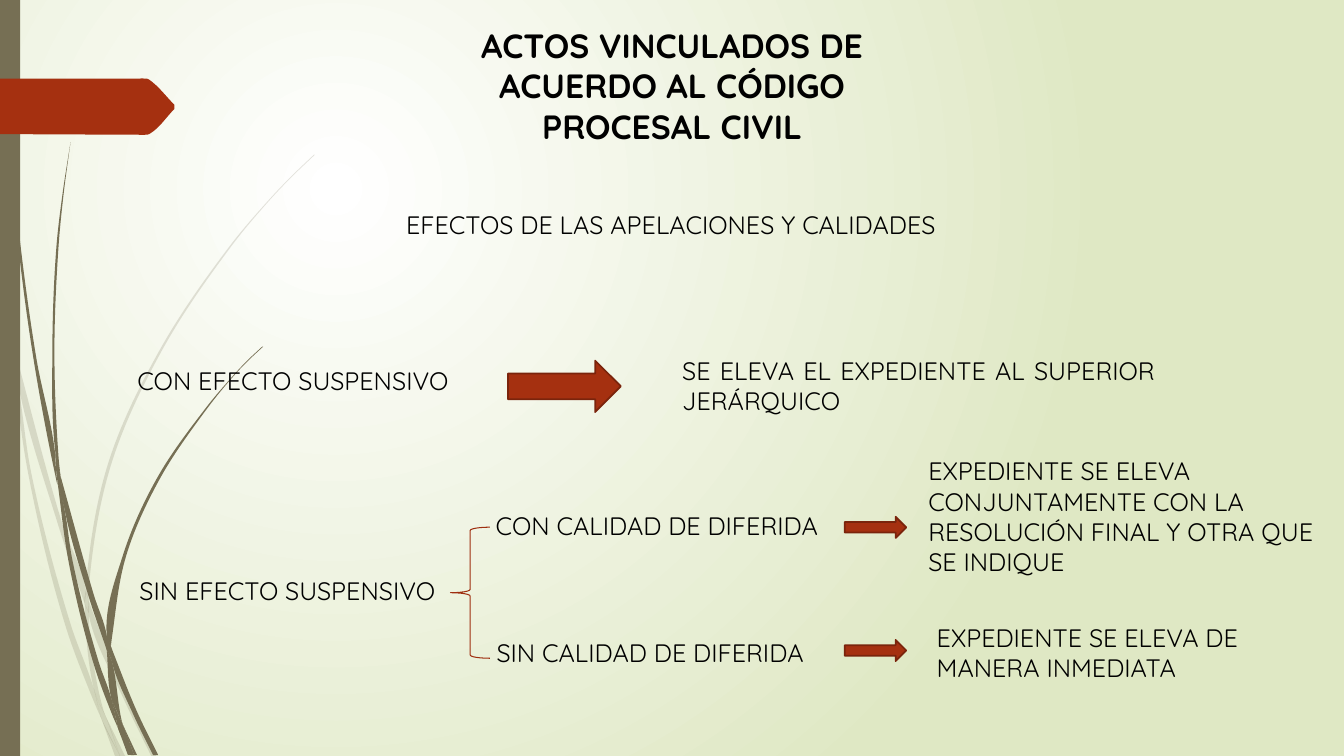
from lxml import etree
from pptx import Presentation
from pptx.dml.color import RGBColor
from pptx.enum.shapes import MSO_SHAPE
from pptx.enum.text import MSO_ANCHOR, PP_ALIGN
from pptx.oxml.ns import qn
from pptx.util import Pt

LEFT, CENTER, JUSTIFY = PP_ALIGN.LEFT, PP_ALIGN.CENTER, PP_ALIGN.JUSTIFY
TOP = MSO_ANCHOR.TOP
RECTANGLE = MSO_SHAPE.RECTANGLE
RIGHT_ARROW, LEFT_BRACE = MSO_SHAPE.RIGHT_ARROW, MSO_SHAPE.LEFT_BRACE

BLACK = RGBColor(0x00, 0x00, 0x00)
WHITE = RGBColor(0xFF, 0xFF, 0xFF)
PALE_GREEN = RGBColor(0xDF, 0xE8, 0xC4)
OLIVE = RGBColor(0x76, 0x6F, 0x54)
RUST = RGBColor(0xA5, 0x30, 0x10)
DARK_RUST = RGBColor(0x7A, 0x24, 0x0C)
BRACE_RUST = RGBColor(0x9E, 0x2E, 0x0F)

FAINT_STEMS = [
    [(7.9, 252), (6.5, 231.8), (0, 203), (0, 215.3), (7.2, 247.7)],
    [(41.8, 375.8), (60.5, 431.3), (61.2, 421.9), (44.6, 374.4), (10.1, 248.4), (12.2, 270.7)],
    [(66.2, 437), (63.4, 429.1), (63.4, 439.2), (88.6, 499.7), (108, 540), (111.6, 540),
     (91.4, 498.2)],
    [(85.7, 540), (89.3, 540), (75.6, 511.9)],
    [(67, 491.8), (50.4, 445.7), (22.3, 337.7), (12.2, 270.7), (7.9, 252), (20.2, 338.4),
     (46.8, 447.1), (66.2, 499), (72.7, 514.1), (71.3, 509)],
    [(60.5, 431.3), (62.6, 465.1), (67, 491.8), (69.1, 498.2), (75.6, 511.9),
     (74.2, 508.3), (65.5, 465.1), (63.4, 439.2), (63.4, 437.8)],
    [(63.4, 420.5), (79.2, 332.6), (115.2, 251.3), (164.9, 176.4), (193, 142.6),
     (208.8, 126), (224.6, 110.9), (224.6, 110.2), (208.1, 126), (193, 141.8),
     (164.2, 175.7), (113.8, 250.6), (77, 331.9), (61.2, 420.5), (61.2, 421.9),
     (63.4, 429.1)],
    [(72.7, 514.1), (82.1, 540), (85.7, 540)],
    [(63.4, 437.8), (63.4, 439.2), (63.4, 429.1), (61.2, 421.9), (60.5, 431.3)],
    [(69.1, 498.2), (67, 491.8), (71.3, 509), (72.7, 514.1), (85.7, 540), (75.6, 511.9)],
]
DARK_STEMS = [
    [(5, 79.2), (12.2, 167.8), (23.8, 255.6), (40.3, 343.4), (41, 346.3), (39.6, 329),
     (39.6, 326.2), (25.9, 255.6), (13.7, 167), (5.8, 78.5), (3.6, 34.6), (2.9, 0),
     (2.2, 0), (2.9, 34.6)],
    [(63.4, 426.2), (76.3, 464.4), (76.3, 455.8), (76.3, 454.3), (67, 424.8),
     (43.2, 339.8), (46.1, 363.6)],
    [(81.4, 467.3), (79.2, 461.5), (79.9, 472.3), (95, 509.8), (109.4, 539.3),
     (113, 539.3), (97.9, 508.3)],
    [(79.2, 497.5), (70.6, 473), (51.8, 400.3), (46.1, 363.6), (41, 343.4), (49, 401),
     (67, 474.5), (79.9, 509.8), (84.2, 519.8), (83.5, 516.2)],
    [(43.2, 339.8), (41.8, 326.2), (38.9, 251.3), (41.8, 176.4), (45.4, 139),
     (50.4, 101.5), (44.6, 139), (40.3, 176.4), (37.4, 251.3), (39.6, 323.3)],
    [(95.8, 539.3), (97.9, 539.3), (87.8, 517.7)],
    [(41, 343.4), (46.1, 363.6), (43.2, 339.8), (39.6, 323.3), (39.6, 326.2)],
    [(79.9, 455.8), (90, 397.4), (113.8, 342.7), (147.6, 292.3), (166.3, 269.3),
     (176.4, 258.5), (187.9, 247.7), (187.2, 247.7), (176.4, 257.8), (166.3, 268.6),
     (146.9, 291.6), (112.3, 341.3), (87.8, 396.7), (76.3, 454.3), (79.2, 461.5)],
    [(84.2, 519.8), (91.4, 539.3), (94.3, 539.3)],
    [(76.3, 464.4), (79.2, 497.5), (83.5, 508.3), (87.8, 517.7), (87.1, 515.5),
     (79.9, 472.3), (78.5, 468.7)],
    [(76.3, 464.4), (78.5, 468.7), (79.9, 472.3), (79.2, 461.5), (76.3, 454.3),
     (76.3, 455.8)],
    [(83.5, 508.3), (79.2, 497.5), (83.5, 516.2), (84.2, 519.8), (93.6, 539.3),
     (95.8, 539.3), (87.8, 517.7)],
]
FLAG = [(124.6, 77.8), (106.6, 95.8), (105.1, 96.2), (97.9, 96.2), (0, 95.8), (0, 56.2),
        (97.9, 56.2), (105.1, 56.2), (106.6, 56.9), (124.6, 74.9)]

LABELS = [
    ("EFECTOS DE LAS APELACIONES Y CALIDADES", (283, 146.2, 401, 29), LEFT),
    ("CON EFECTO SUSPENSIVO", (91, 257.4, 249, 29), LEFT),
    ("SIN EFECTO SUSPENSIVO", (92.5, 407.4, 230, 29), LEFT),
    ("SE ELEVA EL EXPEDIENTE AL SUPERIOR JERÁRQUICO", (480.2, 250.2, 352, 51), JUSTIFY),
    ("CON CALIDAD DE DIFERIDA", (347, 361, 263, 29), JUSTIFY),
    ("SIN CALIDAD DE DIFERIDA", (347.6, 451.8, 271, 29), JUSTIFY),
    ("EXPEDIENTE SE ELEVA CONJUNTAMENTE CON LA RESOLUCIÓN FINAL Y OTRA QUE SE INDIQUE",
     (656, 322, 304, 94), LEFT),
    ("EXPEDIENTE SE ELEVA DE MANERA INMEDIATA", (662, 441, 298, 51), LEFT),
]
ARROWS = [(362.9, 257.6, 80.6, 36.7), (603.4, 369.1, 43.9, 15.1), (603.4, 457.1, 43.9, 15.1)]


def unit(vector):
    return vector / abs(vector) if vector else 0


def curve_segments(anchors):
    """Yield two handles and an end for each side, keeping sharp corners sharp."""
    sides = [end - start for start, end in zip(anchors, anchors[1:] + anchors[:1])]
    for index, side in enumerate(sides):
        start, direction = anchors[index], unit(side)
        handles = []
        for neighbor in (sides[index - 1], sides[(index + 1) % len(sides)]):
            other = unit(neighbor)
            is_smooth = (direction * other.conjugate()).real > 0.8
            tangent = unit(direction + other) if is_smooth else direction
            handles.append(tangent * abs(side) / 3)
        end = start + side
        yield start + handles[0], end - handles[1], end


def write_text(shape, text, size=18, bold=False, color=BLACK, align=LEFT, font="Quicksand"):
    frame = shape.text_frame
    frame.word_wrap = True
    frame.vertical_anchor = TOP
    paragraph = frame.paragraphs[0]
    paragraph.alignment = align
    run = paragraph.add_run()
    run.text = text
    run.font.name = font
    run.font.size = Pt(size)
    run.font.bold = bold
    run.font.color.rgb = color


class SlideBuilder:
    def __init__(self, slide):
        self.slide = slide
        self.shapes = slide.shapes

    def background(self, center_color, edge_color):
        """Fill the background with a circular gradient centred in the upper left."""
        fill = self.slide.background.fill
        fill.gradient()
        for stop, position, color in zip(fill.gradient_stops, (0, 1),
                                         (center_color, edge_color)):
            stop.position = position
            stop.color.rgb = color
        gradient = self.slide.element.find(".//" + qn("a:gradFill"))
        gradient.remove(gradient.find(qn("a:lin")))
        circle = etree.SubElement(gradient, qn("a:path"), path="circle")
        etree.SubElement(circle, qn("a:fillToRect"),
                         l="50000", t="50000", r="100000", b="100000")

    def paint(self, shape, fill=None, line=None, line_width=1.25, opacity=100):
        shape.shadow.inherit = False
        if fill is None:
            shape.fill.background()
        else:
            shape.fill.solid()
            shape.fill.fore_color.rgb = fill
        if opacity < 100:
            color = shape.element.spPr.find(".//" + qn("a:srgbClr"))
            etree.SubElement(color, qn("a:alpha"), val=str(opacity * 1000))
        if line is None:
            shape.line.fill.background()
        else:
            shape.line.color.rgb = line
            shape.line.width = Pt(line_width)

    def shape(self, kind, box, **style):
        self.paint(self.shapes.add_shape(kind, *map(Pt, box)), **style)

    def curved_shape(self, points, **style):
        corners = [(Pt(x), Pt(y)) for x, y in points]
        builder = self.shapes.build_freeform(*corners[0])
        builder.add_line_segments(corners[1:], close=True)
        shape = builder.convert_to_shape()
        outline = shape.element.find(".//" + qn("a:path"))
        anchors = [complex(int(point.get("x")), int(point.get("y")))
                   for point in outline.iter(qn("a:pt"))]
        for straight in outline.findall(qn("a:lnTo")):
            outline.remove(straight)
        closing = outline.find(qn("a:close"))
        for segment in curve_segments(anchors):
            curve = etree.Element(qn("a:cubicBezTo"))
            for point in segment:
                etree.SubElement(curve, qn("a:pt"),
                                 x=str(round(point.real)), y=str(round(point.imag)))
            closing.addprevious(curve)
        self.paint(shape, **style)

    def title(self, text, box):
        title = self.shapes.title
        title.left, title.top, title.width, title.height = map(Pt, box)
        write_text(title, text, size=24, bold=True, align=CENTER)

    def label(self, text, box, align):
        write_text(self.shapes.add_textbox(*map(Pt, box)), text, align=align)


def main():
    presentation = Presentation()
    presentation.slide_width, presentation.slide_height = Pt(960), Pt(540)
    title_only = presentation.slide_layouts[5]
    builder = SlideBuilder(presentation.slides.add_slide(title_only))

    builder.background(WHITE, PALE_GREEN)
    for stems, opacity in ((FAINT_STEMS, 20), (DARK_STEMS, 100)):
        for stem in stems:
            builder.curved_shape(stem, fill=OLIVE, opacity=opacity)
    builder.shape(RECTANGLE, (0, 0, 14.4, 540), fill=OLIVE)
    builder.curved_shape(FLAG, fill=RUST)

    builder.title("ACTOS VINCULADOS DE ACUERDO AL CÓDIGO PROCESAL CIVIL",
                  (298, 14.2, 364, 94))
    for text, box, align in LABELS:
        builder.label(text, box, align)
    for box in ARROWS:
        builder.shape(RIGHT_ARROW, box, fill=RUST, line=DARK_RUST)
    builder.shape(LEFT_BRACE, (321.8, 376.6, 28.1, 93.6), line=BRACE_RUST, line_width=0.75)
    presentation.save("out.pptx")


if __name__ == "__main__":
    main()
